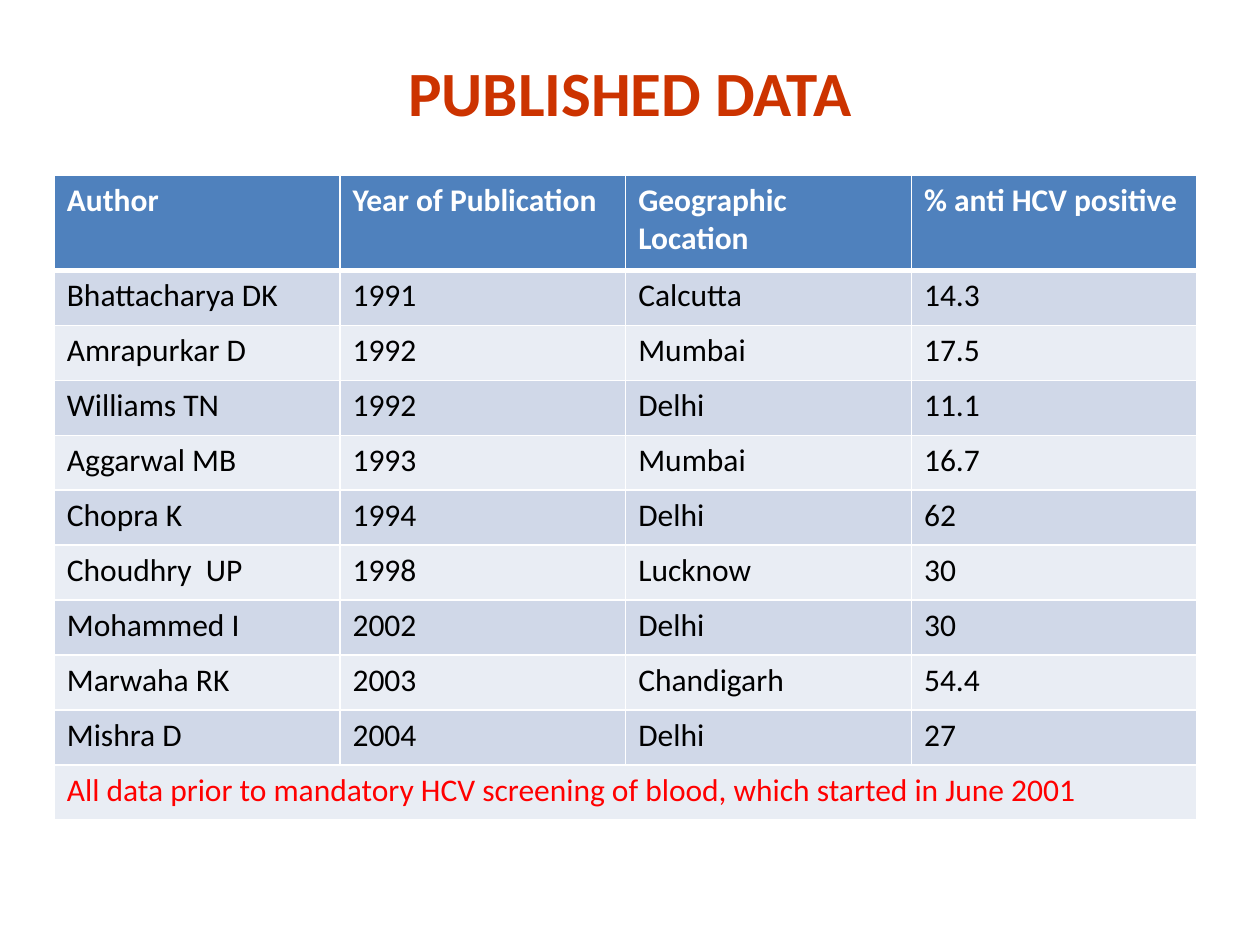
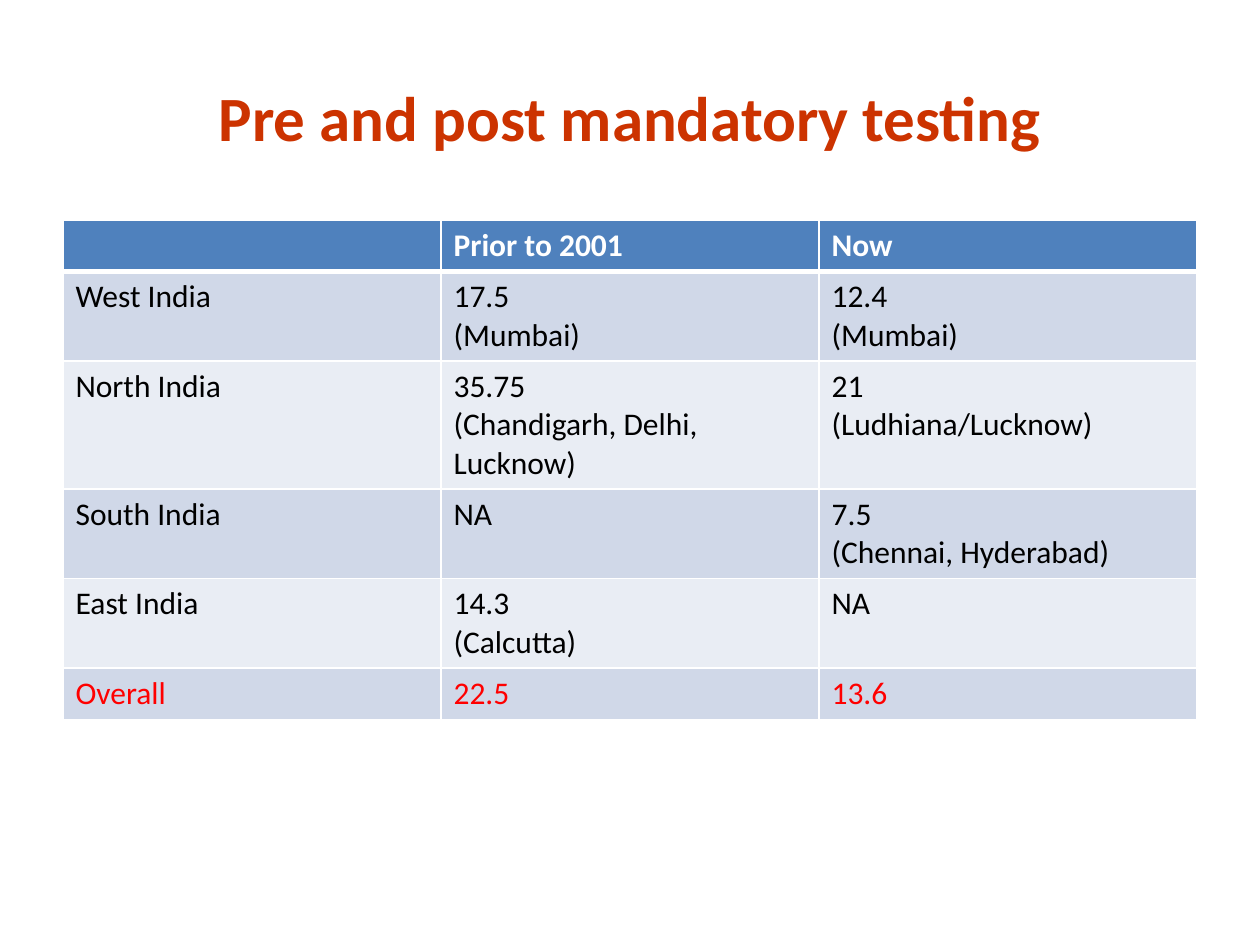
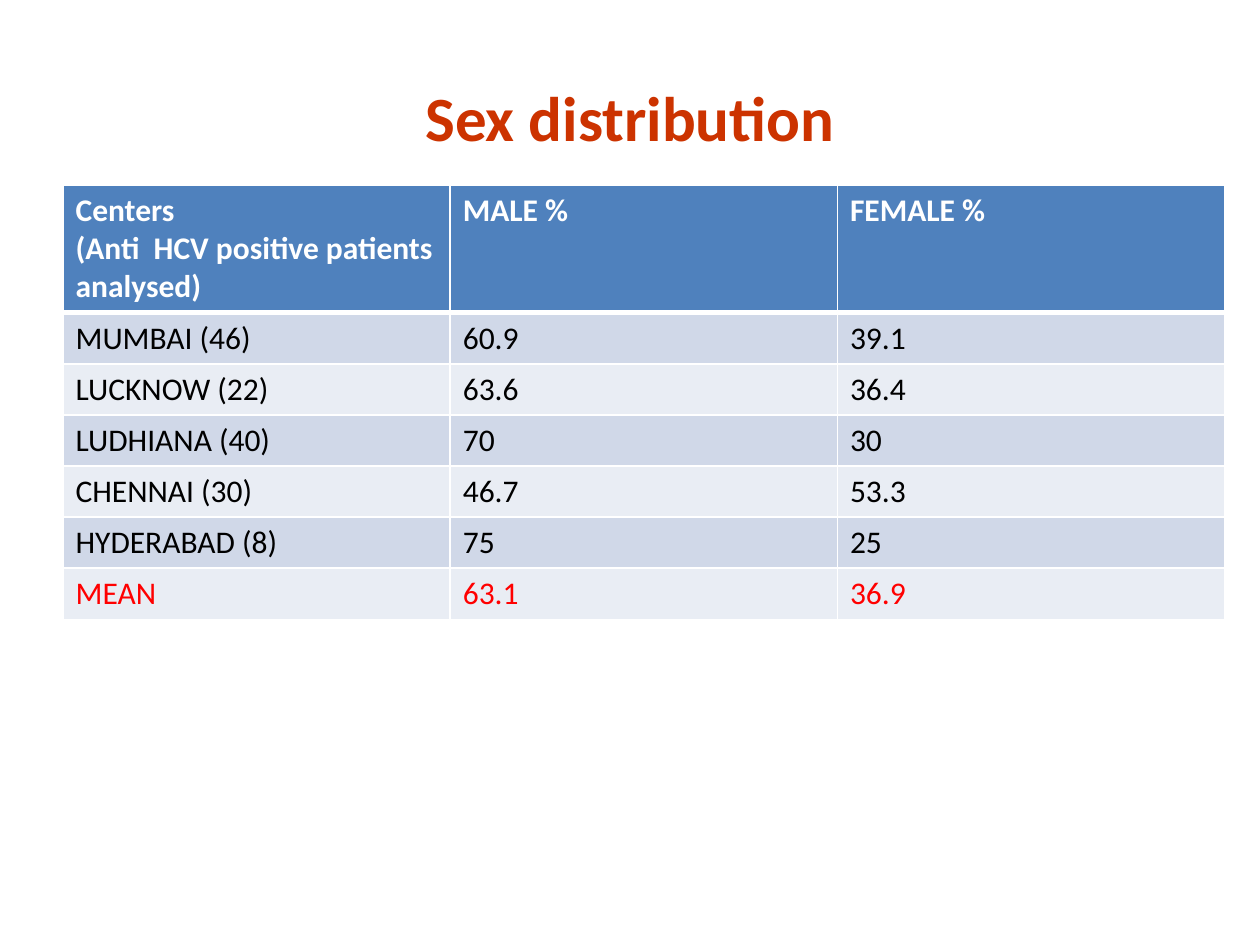
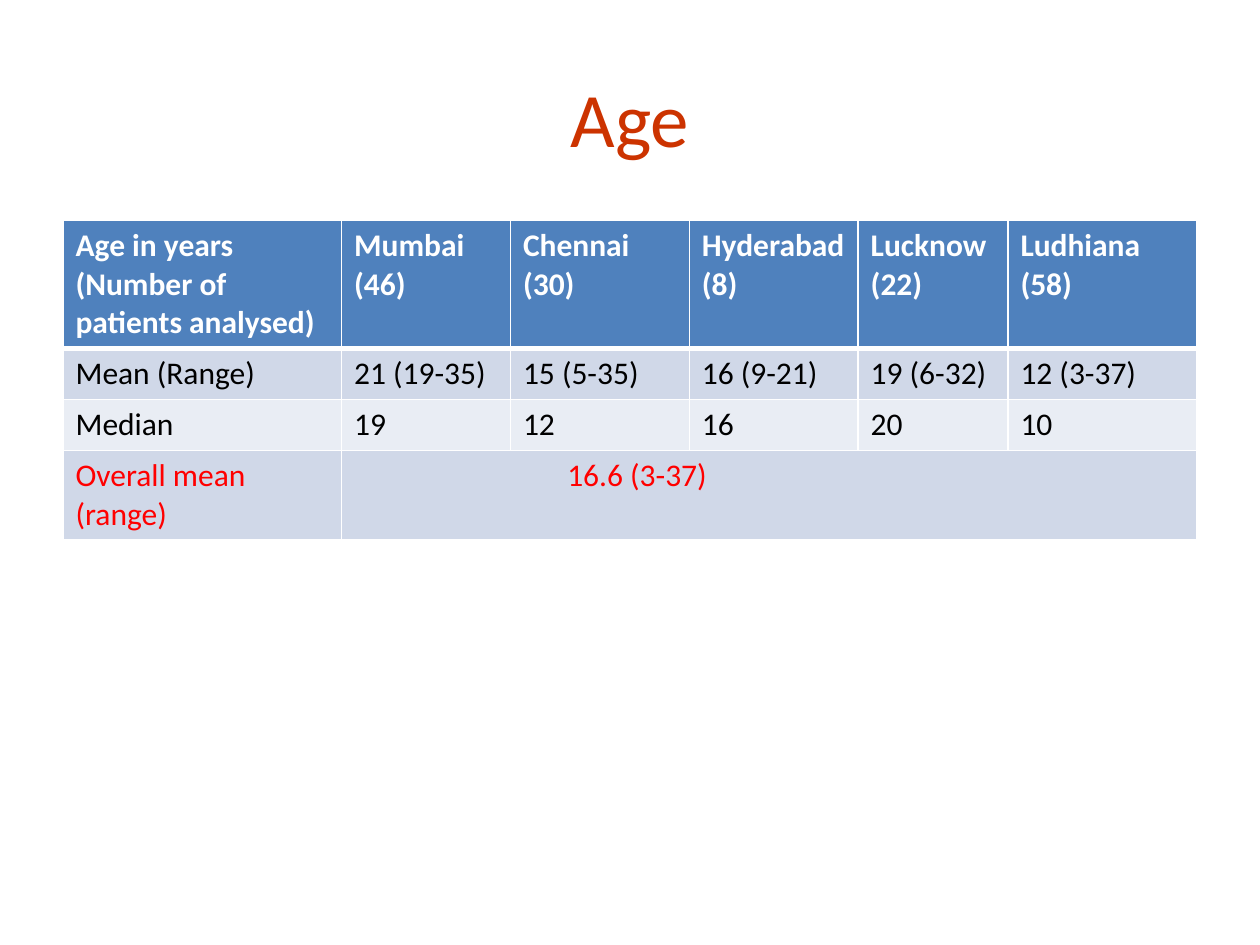
import pptx
import pptx.util
import pptx.dml.color
import pptx.enum.text
import lxml.etree
from pptx.oxml.ns import qn

Pt = pptx.util.Pt

# Shared look
FONT = "Calibri"
TITLE_COLOR = "CC3300"
HEADER_FILL = "4F81BD"
BAND_FILLS = ["E9EDF4", "D0D8E8"]
WHITE, BLACK, RED = "FFFFFF", "000000", "FF0000"
LEFT, ROW_HEIGHT = 36, 29.2


def add_span(para, text, size, color, bold):
    """Add one formatted run."""
    span = para.add_run()
    span.text = text
    span.font.name = FONT
    span.font.size = Pt(size)
    span.font.bold = bold
    span.font.color.rgb = pptx.dml.color.RGBColor.from_string(color)


def add_border(cell, side, width):
    """Draw one white cell edge; side is L, R, T or B."""
    line = lxml.etree.SubElement(cell._tc.get_or_add_tcPr(), qn("a:ln" + side),
                                 w=str(Pt(width)))
    fill = lxml.etree.SubElement(line, qn("a:solidFill"))
    lxml.etree.SubElement(fill, qn("a:srgbClr"), val=WHITE)


# Contents: the first row is the header, the last one is the red summary
pages = [
    {
        "title": "PUBLISHED DATA", "title_height": 61.2,
        "left": 31, "top": 100, "height": 368.6,
        "widths": [163.3] * 4, "heights": [54.6] + [31.4] * 10,
        "merge_from": 0,
        "rows": [
            ["Author", "Year of Publication", "Geographic Location", "% anti HCV positive"],
            ["Bhattacharya DK", "1991", "Calcutta", "14.3"],
            ["Amrapurkar D", "1992", "Mumbai", "17.5"],
            ["Williams TN", "1992", "Delhi", "11.1"],
            ["Aggarwal MB", "1993", "Mumbai", "16.7"],
            ["Chopra K", "1994", "Delhi", "62"],
            ["Choudhry  UP", "1998", "Lucknow", "30"],
            ["Mohammed I", "2002", "Delhi", "30"],
            ["Marwaha RK", "2003", "Chandigarh", "54.4"],
            ["Mishra D", "2004", "Delhi", "27"],
            ["All data prior to mandatory HCV screening of blood, which started in June 2001"],
        ],
    },
    {
        "title": "Pre and post mandatory testing",
        "top": 126, "height": 281.5, "widths": [216] * 3,
        "rows": [
            ["", "Prior to 2001", "Now"],
            ["West India", "17.5\n(Mumbai)", "12.4\n(Mumbai)"],
            ["North India", "35.75\n(Chandigarh, Delhi, Lucknow)", "21\n(Ludhiana/Lucknow)"],
            ["South India", "NA", "7.5\n(Chennai, Hyderabad)"],
            ["East India", "14.3\n(Calcutta)", "NA"],
            ["Overall", "22.5", "13.6"],
        ],
    },
    {
        "title": "Sex distribution",
        "top": 105.6, "height": 247, "widths": [221.3] * 3,
        "rows": [
            ["Centers\n(Anti  HCV positive patients analysed)", "MALE %", "FEMALE %"],
            ["MUMBAI (46)", "60.9", "39.1"],
            ["LUCKNOW (22)", "63.6", "36.4"],
            ["LUDHIANA (40)", "70", "30"],
            ["CHENNAI (30)", "46.7", "53.3"],
            ["HYDERABAD (8)", "75", "25"],
            ["MEAN", "63.1", "36.9"],
        ],
    },
    {
        "title": "Age", "title_size": 44, "title_bold": False,
        "top": 126, "height": 180.7,
        "widths": [159.2, 96.5, 102.2, 96.5, 85.6, 108],
        "merge_from": 1, "merged_margin": 129,
        "rows": [
            ["Age in years (Number of patients analysed)", "Mumbai (46)", "Chennai\n(30)",
             "Hyderabad (8)", "Lucknow\n(22)", "Ludhiana\n(58)"],
            ["Mean (Range)", "21 (19-35)", "15 (5-35)", "16 (9-21)", "19 (6-32)", "12 (3-37)"],
            ["Median", "19", "12", "16", "20", "10"],
            ["Overall mean (range)", "16.6 (3-37)"],
        ],
    },
]

deck = pptx.Presentation()
deck.slide_width, deck.slide_height = Pt(720), Pt(540)

for content in pages:
    page = deck.slides.add_slide(deck.slide_layouts[5])

    # Title
    title = page.shapes.title
    title.left, title.top = Pt(LEFT), Pt(21.6)
    title.width, title.height = Pt(648), Pt(content.get("title_height", 90))
    title.text_frame.vertical_anchor = pptx.enum.text.MSO_ANCHOR.MIDDLE
    para = title.text_frame.paragraphs[0]
    para.alignment = pptx.enum.text.PP_ALIGN.CENTER
    add_span(para, content["title"], content.get("title_size", 36), TITLE_COLOR,
             content.get("title_bold", True))

    # Table grid
    rows, widths = content["rows"], content["widths"]
    last_row, last_column = len(rows) - 1, len(widths) - 1
    heights = content.get("heights", [ROW_HEIGHT] * len(rows))
    frame = page.shapes.add_table(len(rows), len(widths), Pt(content.get("left", LEFT)),
                                  Pt(content["top"]), Pt(sum(widths)), Pt(sum(heights)))
    table = frame.table
    for column, width in zip(table.columns, widths):
        column.width = Pt(width)
    for row, height in zip(table.rows, heights):
        row.height = Pt(height)
    frame.height = Pt(content["height"])

    # Cell fills and edges, with a thick line under the header
    for r in range(len(rows)):
        for c in range(len(widths)):
            cell = table.cell(r, c)
            for side in "LRTB":
                thick = (r, side) in [(0, "B"), (1, "T")]
                add_border(cell, side, 3 if thick else 1)
            cell.fill.solid()
            fill = HEADER_FILL if r == 0 else BAND_FILLS[r % 2]
            cell.fill.fore_color.rgb = pptx.dml.color.RGBColor.from_string(fill)

    # Merged summary cell
    if "merge_from" in content:
        summary = table.cell(last_row, content["merge_from"])
        summary.merge(table.cell(last_row, last_column))
        summary.margin_left = Pt(content.get("merged_margin", 7.2))

    # Cell text, one paragraph a line
    for r, texts in enumerate(rows):
        color = WHITE if r == 0 else RED if r == last_row else BLACK
        for c, text in enumerate(texts):
            box = table.cell(r, c).text_frame
            for number, line in enumerate(text.splitlines()):
                para = box.add_paragraph() if number else box.paragraphs[0]
                add_span(para, line, 18, color, r == 0)

deck.save("out.pptx")
